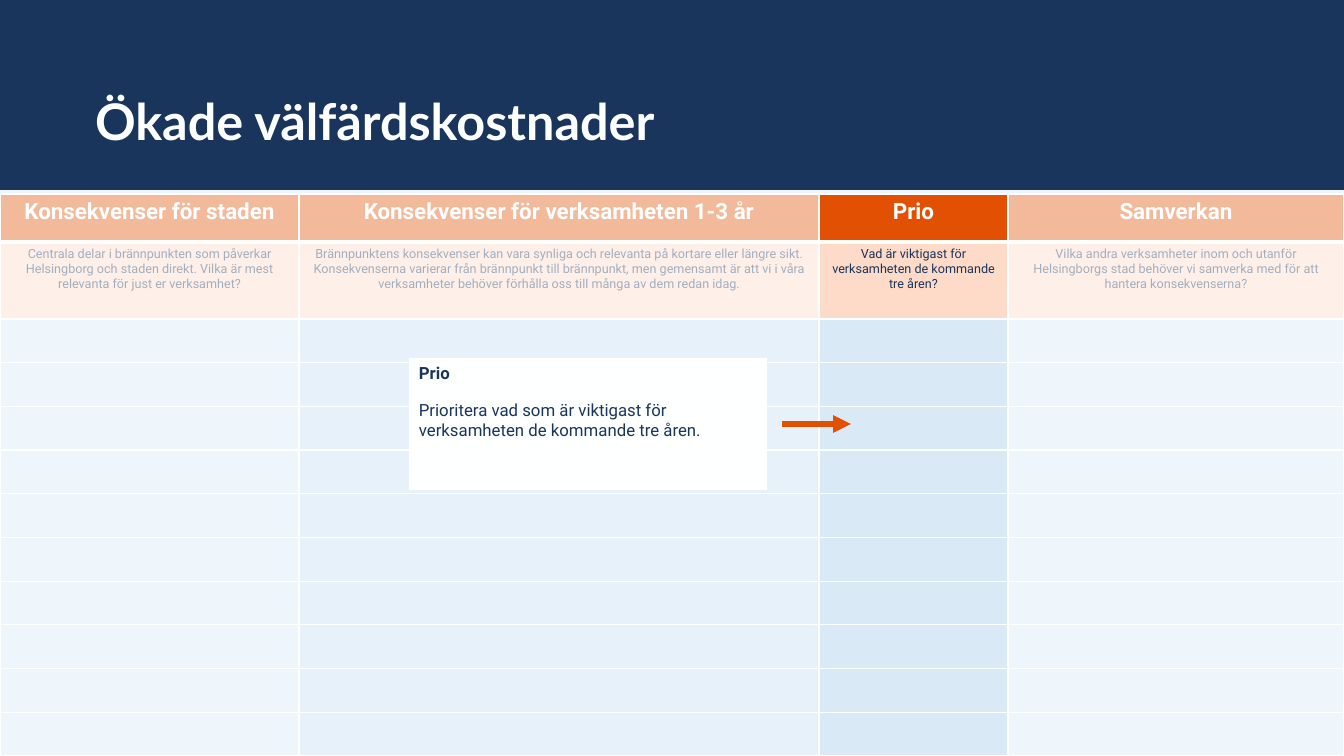
from lxml.etree import SubElement
from pptx import Presentation
from pptx.dml.color import RGBColor
from pptx.enum.shapes import MSO_CONNECTOR, MSO_SHAPE
from pptx.enum.text import MSO_ANCHOR, MSO_AUTO_SIZE, PP_ALIGN
from pptx.oxml import parse_xml
from pptx.oxml.ns import nsdecls, qn
from pptx.util import Emu, Pt

NAVY = RGBColor(0x1A, 0x35, 0x5C)
WHITE = RGBColor(0xFE, 0xFF, 0xFF)
ORANGE = RGBColor(0xE2, 0x51, 0x03)
PEACH = RGBColor(0xFE, 0xDB, 0xC8)
BLUE = RGBColor(0xC6, 0xDE, 0xF2)
PALE = RGBColor(0xEE, 0xF5, 0xFB)

TITLE = "Ökade välfärdskostnader"
COLUMNS = [
    (299, "Konsekvenser för staden",
     "Centrala delar i brännpunkten som påverkar Helsingborg och staden direkt. "
     "Vilka är mest relevanta för just er verksamhet?"),
    (520, "Konsekvenser för verksamheten 1-3 år",
     "Brännpunktens konsekvenser kan vara synliga och relevanta på kortare eller längre sikt. "
     "Konsekvenserna varierar från brännpunkt till brännpunkt, men gemensamt är att vi i våra "
     "verksamheter behöver förhålla oss till många av dem redan idag."),
    (189, "Prio", "Vad är viktigast för verksamheten de kommande tre åren?"),
    (336, "Samverkan",
     "Vilka andra verksamheter inom och utanför Helsingborgs stad behöver vi samverka med "
     "för att hantera konsekvenserna?"),
]
NOTE = ["Prio", "Prioritera vad som är viktigast för verksamheten de kommande tre åren."]

WIDTH, HEIGHT = 1344, 756
BAND_HEIGHT = 190
TABLE_TOP = 194
HEADER_HEIGHT, GUIDE_HEIGHT, EMPTY_ROWS = 48, 77, 10
NOTE_BOX = (409, 358, 358, 132)
ARROW = (782, 424, 851, 424)
SOLID_COLUMN = 1


def px(length):
    """Turn pixels into EMU."""
    return Emu(round(length * 914400 / 100.8))


def set_alpha(fill, percent):
    """Make a solid fill partly transparent."""
    color = fill._xPr.find(qn("a:solidFill"))[0]
    SubElement(color, qn("a:alpha"), val=str(percent * 1000))


def style(paragraph, font_name, size, color, bold):
    """Set the font of a paragraph."""
    font = paragraph.font
    font.name, font.size, font.bold = font_name, Pt(size), bold
    font.color.rgb = color


def add_box(page, frame, color, alpha=100):
    """Add a borderless rectangle."""
    box = page.shapes.add_shape(MSO_SHAPE.RECTANGLE, *map(px, frame))
    box.shadow.inherit = False
    box.fill.solid()
    box.fill.fore_color.rgb = color
    if alpha < 100:
        set_alpha(box.fill, alpha)
    box.line.fill.background()
    return box


def paint_cell(cell, color, alpha=100, top=1, bottom=1):
    """Fill a cell and draw its white borders."""
    cell.fill.solid()
    cell.fill.fore_color.rgb = color
    if alpha < 100:
        set_alpha(cell.fill, alpha)
    properties = cell._tc.get_or_add_tcPr()
    widths = [("lnL", 1), ("lnR", 1), ("lnT", top), ("lnB", bottom)]
    for position, (side, width) in enumerate(widths):
        properties.insert(position, parse_xml(
            f'<a:{side} {nsdecls("a")} w="{Pt(width)}"><a:solidFill>'
            f'<a:srgbClr val="{WHITE}"/></a:solidFill></a:{side}>'))


def write_cell(cell, text, size, color, bold):
    """Write one centred paragraph in a cell."""
    cell.text = text
    paragraph = cell.text_frame.paragraphs[0]
    paragraph.alignment = PP_ALIGN.CENTER
    style(paragraph, "Roboto", size, color, bold)


def add_title(page):
    """Place the band and the title over it."""
    band = add_box(page, (0, 0, WIDTH, BAND_HEIGHT), NAVY)
    page.shapes._spTree.insert(2, band._element)
    title = page.shapes.title
    title.left, title.top, title.width, title.height = map(px, (95, 24, 1008, 127))
    frame = title.text_frame
    frame.text = TITLE
    frame.auto_size = MSO_AUTO_SIZE.NONE
    frame.vertical_anchor = MSO_ANCHOR.BOTTOM
    frame.margin_left = frame.margin_top = frame.margin_right = frame.margin_bottom = 0
    paragraph = frame.paragraphs[0]
    paragraph.alignment = PP_ALIGN.LEFT
    paragraph.line_spacing = 0.9
    style(paragraph, "Lato", 36, WHITE, True)


def add_worksheet(page):
    """Add the table with headings, guidance and empty rows."""
    total = HEIGHT - TABLE_TOP
    empty_height = (total - HEADER_HEIGHT - GUIDE_HEIGHT) / EMPTY_ROWS
    heights = [HEADER_HEIGHT, GUIDE_HEIGHT] + [empty_height] * EMPTY_ROWS
    table = page.shapes.add_table(
        len(heights), len(COLUMNS), 0, px(TABLE_TOP), px(WIDTH), px(total)).table
    table.horz_banding = False
    for row, height in zip(table.rows, heights):
        row.height = px(height)
    for index, (width, heading, guide) in enumerate(COLUMNS):
        table.columns[index].width = px(width)
        header, guidance = table.cell(0, index), table.cell(1, index)
        write_cell(header, heading, 16, WHITE, True)
        paint_cell(header, ORANGE, bottom=3)
        write_cell(guidance, guide, 9, NAVY, False)
        paint_cell(guidance, PEACH, top=3)
        for row in range(2, len(heights)):
            paint_cell(table.cell(row, index), BLUE, 100 if index == SOLID_COLUMN else 50)


def add_veils(page):
    """Fade every column except the priority one."""
    widths = [column[0] for column in COLUMNS]
    for left, width in [(WIDTH - widths[3], widths[3]), (0, sum(widths[:2]))]:
        add_box(page, (left, TABLE_TOP, width, HEIGHT - TABLE_TOP), WHITE, 60)


def add_note(page):
    """Add the explanation and its arrow."""
    frame = add_box(page, NOTE_BOX, WHITE).text_frame
    frame.word_wrap = True
    frame.vertical_anchor = MSO_ANCHOR.TOP
    frame.text = "\n".join(NOTE)
    for index, paragraph in enumerate(frame.paragraphs):
        paragraph.alignment = PP_ALIGN.LEFT
        paragraph.space_before = Pt(12 * index)
        style(paragraph, "Roboto", 12, NAVY, index == 0)
    arrow = page.shapes.add_connector(MSO_CONNECTOR.STRAIGHT, *map(px, ARROW))
    arrow.line.color.rgb = ORANGE
    arrow.line.width = Pt(4.25)
    SubElement(arrow.line._get_or_add_ln(), qn("a:tailEnd"), type="triangle")
    SubElement(arrow._element.spPr, qn("a:effectLst"))


def main():
    """Build and save the slide."""
    deck = Presentation()
    deck.slide_width, deck.slide_height = px(WIDTH), px(HEIGHT)
    page = deck.slides.add_slide(deck.slide_layouts[0])
    page.background.fill.solid()
    page.background.fill.fore_color.rgb = PALE
    subtitle = page.placeholders[1]._element
    subtitle.getparent().remove(subtitle)
    add_title(page)
    add_worksheet(page)
    add_veils(page)
    add_note(page)
    deck.save("out.pptx")


if __name__ == "__main__":
    main()
